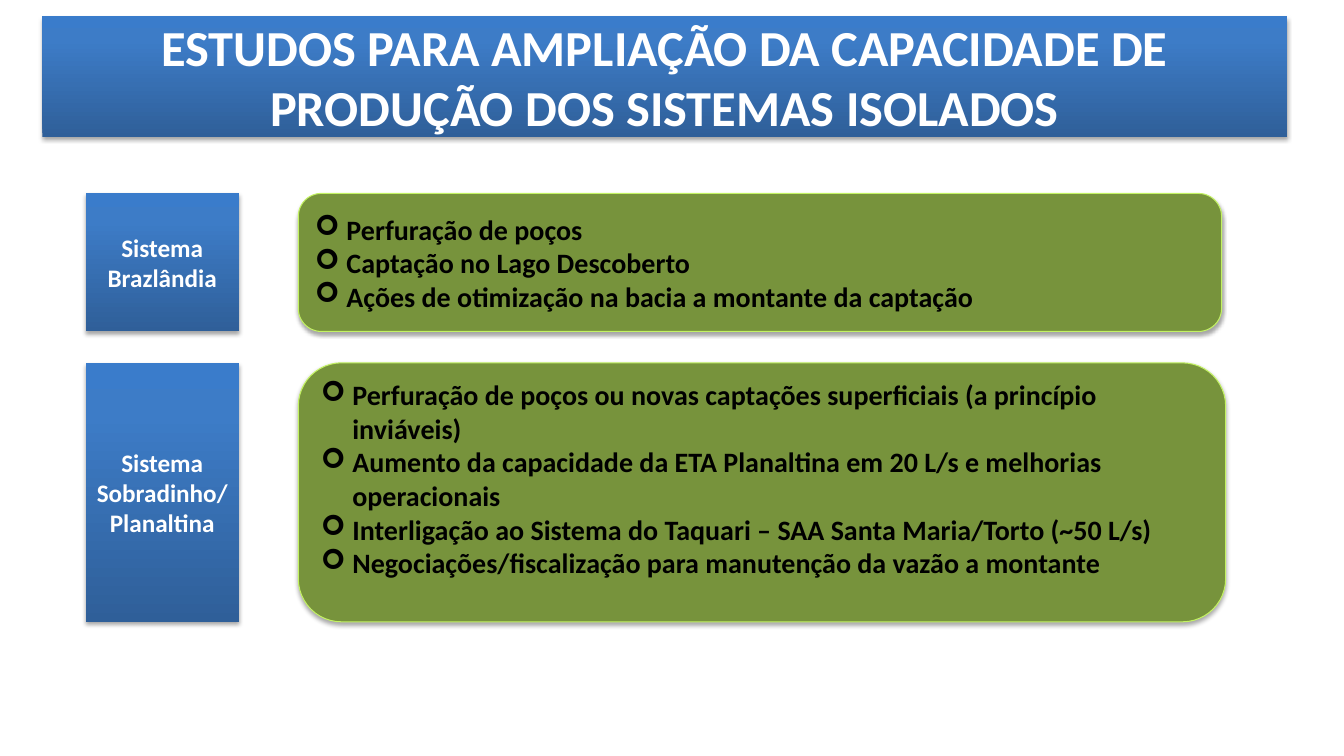
"""Build the slide on capacity studies for the isolated water systems."""
from copy import deepcopy

from lxml.etree import SubElement
from pptx import Presentation
from pptx.dml.color import RGBColor
from pptx.enum.shapes import MSO_SHAPE as Shape
from pptx.enum.text import MSO_ANCHOR as Anchor, MSO_AUTO_SIZE as AutoSize, PP_ALIGN as Align
from pptx.oxml.ns import qn
from pptx.util import Pt

TITLE = "ESTUDOS PARA AMPLIAÇÃO DA CAPACIDADE DE PRODUÇÃO DOS SISTEMAS ISOLADOS"
SYSTEMS = [
    {
        "label": "Sistema Brazlândia",
        "actions": [
            "Perfuração de poços",
            "Captação no Lago Descoberto",
            "Ações de otimização na bacia a montante da captação",
        ],
        "height": 98.6, "panel_width": 659.5, "anchor": Anchor.MIDDLE, "inset": 3.6,
    },
    {
        "label": "Sistema Sobradinho/Planaltina",
        "actions": [
            "Perfuração de poços ou novas captações superficiais (a princípio inviáveis)",
            "Aumento da capacidade da ETA Planaltina em 20 L/s e melhorias operacionais",
            "Interligação ao Sistema do Taquari – SAA Santa Maria/Torto (~50 L/s)",
            "Negociações/fiscalização para manutenção da vazão a montante",
        ],
        "height": 185, "panel_width": 662.4, "anchor": Anchor.TOP, "inset": 1.5,
    },
]
COLORS = {
    "white": "FFFFFF", "black": "000000", "green": "77933C", "lime": "C3F263",
    "blue_dark": "2F5F99", "blue_mid": "3D7CC7", "blue_light": "3A7CCB",
}
BLUE_STOPS = [(0, "blue_dark"), (0.8, "blue_mid"), (1, "blue_light")]
FONT = "Calibri"
TITLE_BOX = (30.2, 11.5, 889.2, 86.4)
LABEL_LEFT, LABEL_WIDTH, PANEL_LEFT = 61.2, 109.4, 213.1
FIRST_TOP, ROW_GAP = 138.2, 22.4
BULLET_INDENT = 22.5


def color(name):
    return RGBColor.from_string(COLORS[name])


def add_shadow(shape):
    shape.shadow.inherit = False
    effects = shape._element.spPr.find(qn("a:effectLst"))
    shadow = SubElement(effects, qn("a:outerShdw"), blurRad=str(Pt(3.1)),
                        dist=str(Pt(1.8)), dir="5400000", rotWithShape="0")
    tint = SubElement(shadow, qn("a:srgbClr"), val=COLORS["black"])
    SubElement(tint, qn("a:alpha"), val="35000")


def paint_blue(shape):
    shape.fill.gradient()
    shape.fill.gradient_angle = 90
    stop_list = shape._element.spPr.find(qn("a:gradFill")).find(qn("a:gsLst"))
    stop_list.append(deepcopy(stop_list[-1]))
    for stop, (position, name) in zip(shape.fill.gradient_stops, BLUE_STOPS):
        stop.position = position
        stop.color.rgb = color(name)
    shape.line.fill.background()
    add_shadow(shape)


def paint_green(shape):
    shape.fill.solid()
    shape.fill.fore_color.rgb = color("green")
    shape.line.color.rgb = color("lime")
    shape.line.width = Pt(0.75)
    add_shadow(shape)


def add_bullet(paragraph):
    properties = paragraph._p.get_or_add_pPr()
    properties.set("marL", str(Pt(BULLET_INDENT)))
    properties.set("indent", str(-Pt(BULLET_INDENT)))
    SubElement(properties, qn("a:buFont"), typeface="Wingdings")
    SubElement(properties, qn("a:buChar"), char="➢")


def write(shape, lines, size, color_name, align, bulleted=False, anchor=Anchor.MIDDLE):
    frame = shape.text_frame
    frame.word_wrap = True
    frame.auto_size = AutoSize.NONE
    frame.vertical_anchor = anchor
    frame.text = "\n".join(lines)
    for paragraph in frame.paragraphs:
        paragraph.alignment = align
        if bulleted:
            add_bullet(paragraph)
        font = paragraph.font
        font.name, font.size, font.bold = FONT, Pt(size), True
        font.color.rgb = color(color_name)


def add_title(slide):
    title = slide.shapes.title
    title.left, title.top, title.width, title.height = map(Pt, TITLE_BOX)
    geometry = SubElement(title._element.spPr, qn("a:prstGeom"), prst="roundRect")
    SubElement(geometry, qn("a:avLst"))
    paint_blue(title)
    write(title, [TITLE], 36, "white", Align.CENTER)


def add_system(slide, system, top):
    height = system["height"]
    label = slide.shapes.add_shape(
        Shape.RECTANGLE, Pt(LABEL_LEFT), Pt(top), Pt(LABEL_WIDTH), Pt(height))
    paint_blue(label)
    write(label, [system["label"]], 18, "white", Align.CENTER)

    panel = slide.shapes.add_shape(
        Shape.ROUNDED_RECTANGLE, Pt(PANEL_LEFT), Pt(top), Pt(system["panel_width"]), Pt(height))
    paint_green(panel)
    write(panel, system["actions"], 20, "black", Align.LEFT, True, system["anchor"])
    panel.text_frame.margin_top = panel.text_frame.margin_bottom = Pt(system["inset"])


def main():
    presentation = Presentation()
    presentation.slide_width, presentation.slide_height = Pt(960), Pt(540)
    slide = presentation.slides.add_slide(presentation.slide_layouts[5])
    add_title(slide)
    top = FIRST_TOP
    for system in SYSTEMS:
        add_system(slide, system, top)
        top += system["height"] + ROW_GAP
    presentation.save("out.pptx")


if __name__ == "__main__":
    main()
